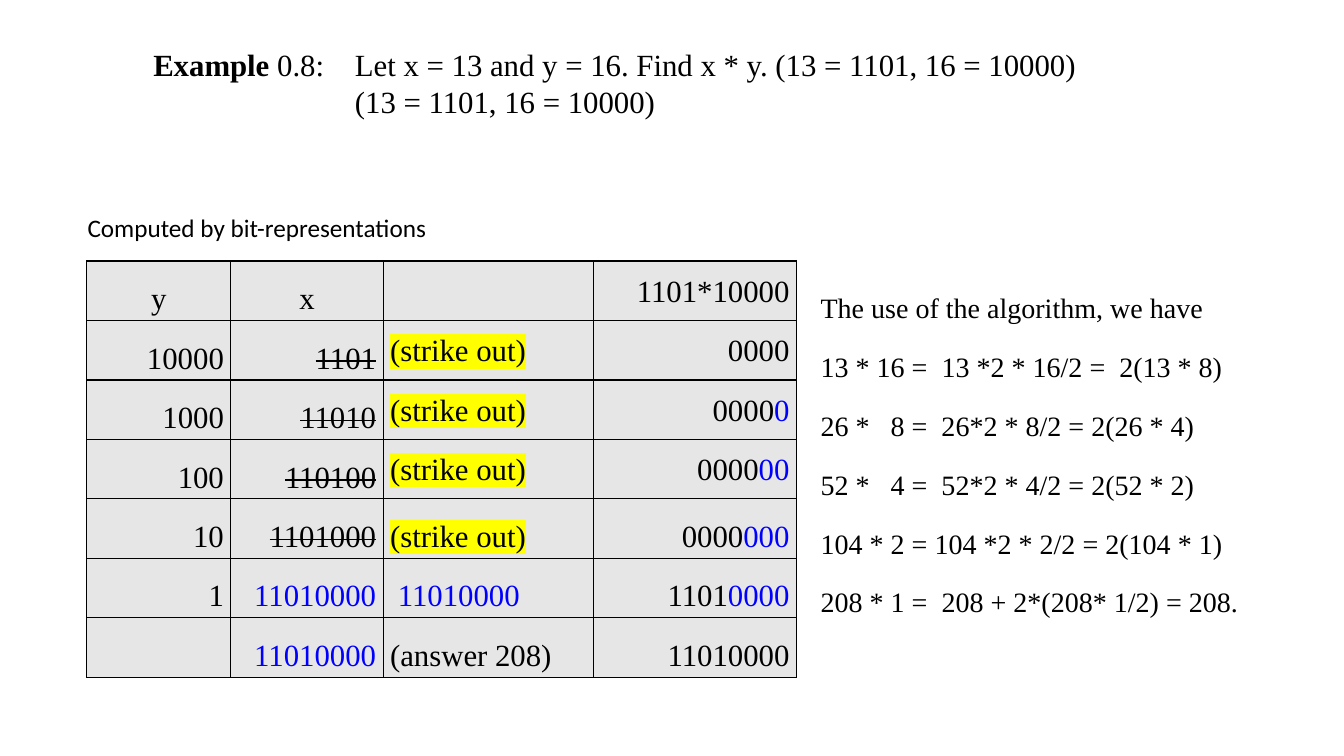
from pptx import Presentation
from pptx.dml.color import RGBColor
from pptx.enum import text
from pptx.oxml import ns, xmlchemy
from pptx.util import Inches, Pt

BLACK, BLUE, YELLOW, GREY = "000000", "0000FF", "FFFF00", "E7E6E6"
SERIF = "Times New Roman"
LEFT, CENTER, RIGHT = text.PP_ALIGN.LEFT, text.PP_ALIGN.CENTER, text.PP_ALIGN.RIGHT

STEPS = [
    "The use of the algorithm, we have",
    "13 * 16 =  13 *2 * 16/2 =  2(13 * 8)",
    "26 *   8 =  26*2 * 8/2 = 2(26 * 4)",
    "52 *   4 =  52*2 * 4/2 = 2(52 * 2)",
    "104 * 2 = 104 *2 * 2/2 = 2(104 * 1)",
    "208 * 1 =  208 + 2*(208* 1/2) = 208.",
]


def color(value):
    return RGBColor.from_string(value)


def add_xml(parent, tag, **attrs):
    el = xmlchemy.OxmlElement(tag)
    for name, value in attrs.items():
        el.set(name, str(value))
    parent.append(el)
    return el


def format_paragraph(p, size, font=SERIF, align=LEFT, spacing=1.0, after=0):
    p.alignment, p.line_spacing, p.space_after = align, spacing, Pt(after)
    p.font.size, p.font.name = Pt(size), font
    p.font.color.rgb = color(BLACK)


def add_run(p, words, style="plain"):
    r = p.add_run()
    r.text = words
    if style == "bold":
        r.font.bold = True
    elif style == "blue":
        r.font.color.rgb = color(BLUE)
    elif style == "strike":
        r.font._element.set("strike", "sngStrike")
    elif style == "marked":
        highlight = add_xml(r.font._element, "a:highlight")
        add_xml(highlight, "a:srgbClr", val=YELLOW)


def place(sp, left, top, width, height):
    sp.left, sp.top = Inches(left), Inches(top)
    sp.width, sp.height = Inches(width), Inches(height)


def set_title(sp):
    place(sp, 1.42, 0.37, 10.16, 1.21)
    tf = sp.text_frame
    tf.word_wrap = True
    tf.auto_size = text.MSO_AUTO_SIZE.NONE
    tf.vertical_anchor = text.MSO_ANCHOR.TOP
    tf.margin_top = Inches(0.08)
    lines = [
        [("Example", "bold"),
         (" 0.8:\tLet x = 13 and y = 16. Find x * y. (13 = 1101, 16 = 10000)", "plain")],
        [("(13 = 1101, 16 = 10000)", "plain")],
    ]
    # The statement hangs two inches in, behind its label
    for i, (runs, indent) in enumerate(zip(lines, (-2, 0))):
        p = tf.paragraphs[0] if i == 0 else tf.add_paragraph()
        format_paragraph(p, 22)
        pPr = p._p.get_or_add_pPr()
        pPr.set("marL", str(Inches(2)))
        pPr.set("indent", str(Inches(indent)))
        for words, style in runs:
            add_run(p, words, style)


def add_text(slide, box, lines, size, **layout):
    sp = slide.shapes.add_textbox(*map(Inches, box))
    tf = sp.text_frame
    tf.word_wrap = True
    for i, line in enumerate(lines):
        p = tf.paragraphs[0] if i == 0 else tf.add_paragraph()
        format_paragraph(p, size, **layout)
        add_run(p, line)


def product_rows():
    """Each cell is a list of (words, style) runs."""
    rows = [[[("y", "plain")], [("x", "plain")], [], [("1101*10000", "plain")]]]
    for shift in range(4):
        zeros = "0" * shift
        product = [("0000", "plain")] + ([(zeros, "blue")] if zeros else [])
        rows.append([[("1" + "0" * (4 - shift), "plain")], [("1101" + zeros, "strike")],
                     [("(strike out)", "marked")], product])
    answer = [("11010000", "blue")]
    rows.append([[("1", "plain")], answer, [(" ", "plain")] + answer,
                 [("1101", "plain"), ("0000", "blue")]])
    rows.append([[], answer, [("(answer 208)", "plain")], [("11010000", "plain")]])
    return rows


def format_cell(cell):
    cell.margin_left = cell.margin_right = Inches(0.07)
    cell.margin_top = cell.margin_bottom = 0
    cell.vertical_anchor = text.MSO_ANCHOR.MIDDLE
    tcPr = cell._tc.get_or_add_tcPr()
    for side in "LRTB":
        line = add_xml(tcPr, f"a:ln{side}", w=Pt(1))
        add_xml(add_xml(line, "a:solidFill"), "a:srgbClr", val=BLACK)
    cell.fill.solid()
    cell.fill.fore_color.rgb = color(GREY)


def add_product_table(slide, rows):
    widths, height = (1.43, 1.51, 2.09, 2.01), 0.59
    frame = slide.shapes.add_table(len(rows), len(widths), Inches(0.86), Inches(2.59),
                                   Inches(sum(widths)), Inches(height * len(rows)))
    table = frame.table
    table.first_row = table.horz_banding = False
    for column, width in zip(table.columns, widths):
        column.width = Inches(width)
    for i, row in enumerate(rows):
        table.rows[i].height = Inches(height)
        for j, runs in enumerate(row):
            cell = table.cell(i, j)
            format_cell(cell)
            align = LEFT if j == 2 else CENTER if i == 0 and j < 2 else RIGHT
            p = cell.text_frame.paragraphs[0]
            format_paragraph(p, 22, align=align,
                             spacing=1.07 if i < 4 and j >= 2 else 1.5)
            for words, style in runs:
                add_run(p, words, style)


def main():
    prs = Presentation()
    prs.slide_width, prs.slide_height = Inches(13.33), Inches(7.5)
    slide = prs.slides.add_slide(prs.slide_layouts[5])

    # Problem statement
    set_title(slide.shapes.title)

    # Bitwise multiplication
    add_product_table(slide, product_rows())
    add_text(slide, (0.77, 2.06, 3.84, 0.4), ["Computed by bit-representations"],
             18, font="Calibri")

    # Decimal steps
    add_text(slide, (8.04, 2.67, 4.75, 3.49), STEPS, 20, spacing=1.5, after=6)

    prs.save("out.pptx")


if __name__ == "__main__":
    main()
